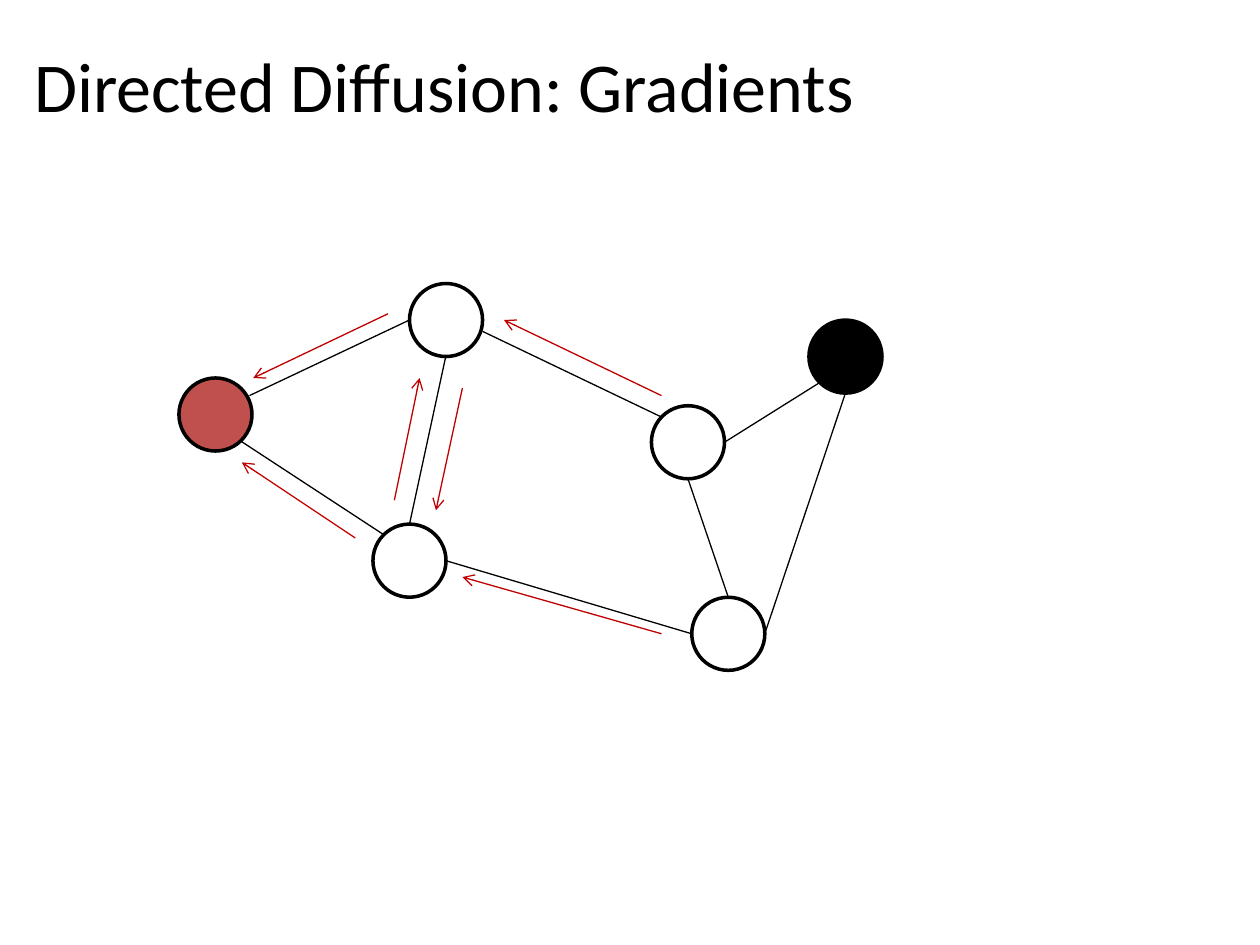
from lxml import etree
from pptx import Presentation
from pptx.dml.color import RGBColor
from pptx.enum.shapes import MSO_CONNECTOR, MSO_SHAPE
from pptx.enum.text import MSO_ANCHOR, PP_ALIGN
from pptx.oxml.ns import qn
from pptx.util import Inches, Pt

STRAIGHT = MSO_CONNECTOR.STRAIGHT
OVAL = MSO_SHAPE.OVAL
MIDDLE = MSO_ANCHOR.MIDDLE
LEFT = PP_ALIGN.LEFT
TITLE_ONLY = 5
BLACK, WHITE, SINK_RED, ARROW_RED = "000000", "FFFFFF", "C0504D", "C00000"
NODE_SIZE = 0.58

NODES = [
    (1.42, 3.0, SINK_RED),
    (6.42, 2.54, BLACK),
    (5.49, 4.74, WHITE),
    (5.17, 3.22, WHITE),
    (2.96, 4.16, WHITE),
    (3.25, 2.25, WHITE),
]
LINKS = [
    (1.91, 3.5, 3.04, 4.24),
    (1.98, 3.14, 3.25, 2.54),
    (3.83, 2.63, 5.25, 3.31),
    (3.54, 2.82, 3.25, 4.16),
    (3.54, 4.45, 5.49, 5.03),
    (5.46, 3.8, 5.78, 4.74),
    (5.75, 3.51, 6.5, 3.04),
    (6.07, 5.03, 6.71, 3.12),
]
GRADIENTS = [
    (2.82, 4.27, 1.92, 3.67),
    (3.08, 2.49, 2.01, 3.0),
    (3.67, 3.08, 3.46, 4.05),
    (3.13, 3.97, 3.33, 3.0),
    (5.25, 3.14, 4.0, 2.54),
    (5.25, 5.03, 3.67, 4.58),
]


def color(value):
    """Turn a hex string into a colour."""
    return RGBColor.from_string(value)


def apply_format(target, values):
    """Set each attribute in values on target."""
    for name, value in values.items():
        setattr(target, name, value)


def add_title(page, text, box):
    """Place and format the title placeholder in box."""
    title = page.shapes.title
    left, top, width, height = (Inches(length) for length in box)
    apply_format(title, {"left": left, "top": top, "width": width, "height": height})
    apply_format(title.text_frame, {"vertical_anchor": MIDDLE, "word_wrap": True})
    para = title.text_frame.paragraphs[0]
    para.alignment = LEFT
    span = para.add_run()
    span.text = text
    apply_format(span.font, {"name": "Calibri", "size": Pt(40)})
    span.font.color.rgb = color(BLACK)


def add_node(shapes, left, top, fill):
    """Draw one outlined network node."""
    node = shapes.add_shape(OVAL, Inches(left), Inches(top), Inches(NODE_SIZE), Inches(NODE_SIZE))
    node.shadow.inherit = False
    node.fill.solid()
    node.fill.fore_color.rgb = color(fill)
    node.line.color.rgb = color(BLACK)
    node.line.width = Pt(2)


def add_line(shapes, ends, stroke, arrow=False):
    """Draw a thin straight line, with an open arrowhead at its end if asked."""
    line = shapes.add_connector(STRAIGHT, *(Inches(length) for length in ends))
    line.line.color.rgb = color(stroke)
    line.line.width = Pt(0.75)
    properties = line._element.spPr
    if arrow:
        etree.SubElement(properties.find(qn("a:ln")), qn("a:tailEnd"), type="arrow")
    etree.SubElement(properties, qn("a:effectLst"))


def add_network(page, left, top):
    """Draw the grouped nodes and links, then the gradients, from a corner."""
    network = page.shapes.add_group_shape().shapes
    for x, y, fill in NODES:
        add_node(network, left + x, top + y, fill)
    for lines, shapes, stroke, arrow in (
        (LINKS, network, BLACK, False),
        (GRADIENTS, page.shapes, ARROW_RED, True),
    ):
        for x1, y1, x2, y2 in lines:
            add_line(shapes, (left + x1, top + y1, left + x2, top + y2), stroke, arrow)


def main():
    """Build and save the deck."""
    deck = Presentation()
    apply_format(deck, {"slide_width": Inches(10), "slide_height": Inches(7.5)})
    page = deck.slides.add_slide(deck.slide_layouts[TITLE_ONLY])
    add_title(page, "Directed Diffusion: Gradients", (0.17, -0.08, 8.5, 1.5))
    add_network(page, 0, 0)
    deck.save("out.pptx")


if __name__ == "__main__":
    main()
